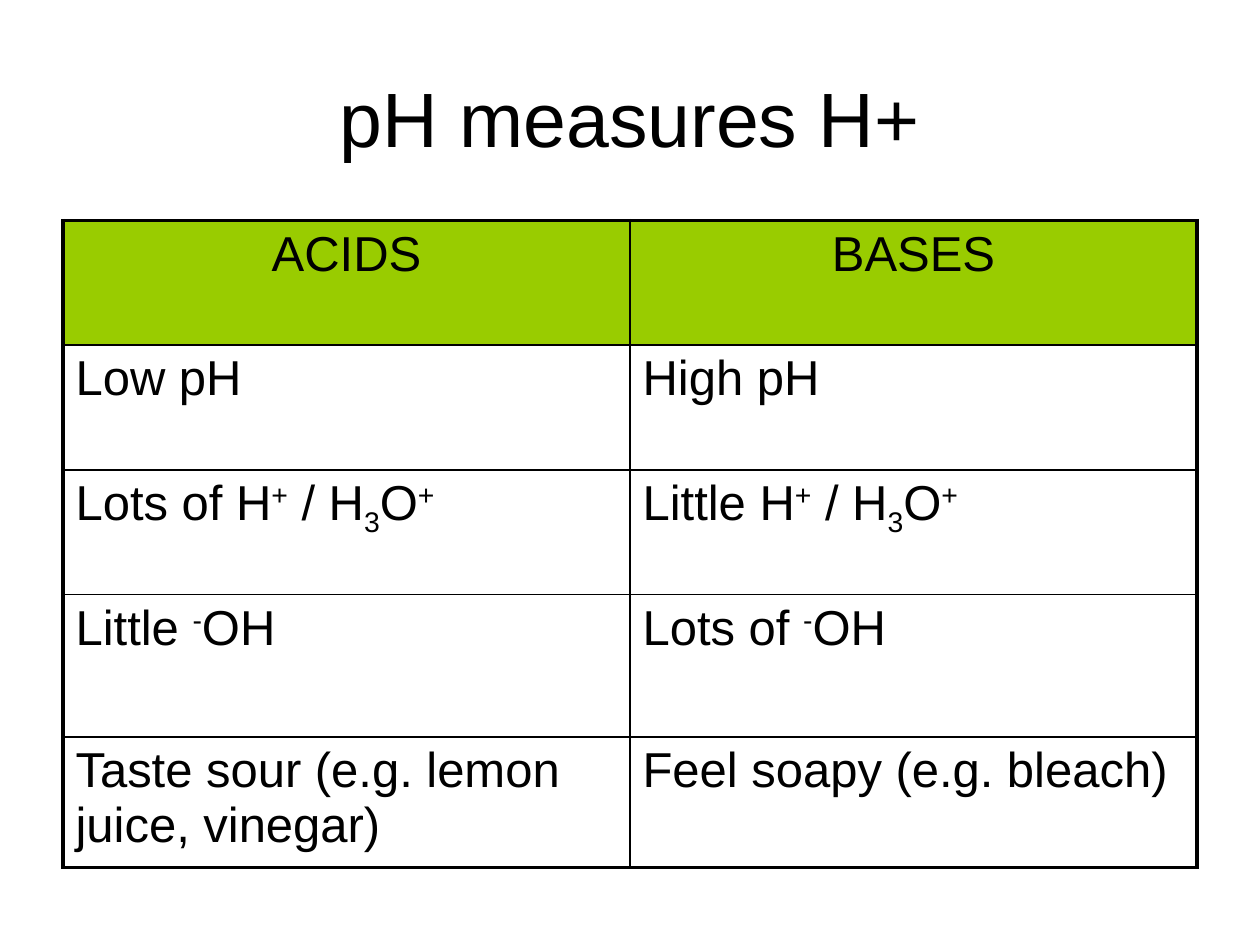
from lxml import etree
from pptx import Presentation
from pptx.dml.color import RGBColor
from pptx.enum.text import MSO_ANCHOR, PP_ALIGN
from pptx.oxml.ns import qn
from pptx.util import Inches, Pt

CENTER = PP_ALIGN.CENTER
LEFT = PP_ALIGN.LEFT
MIDDLE = MSO_ANCHOR.MIDDLE
BLACK = "000000"
GREEN = "99CC00"
SUPERSCRIPT = 30000
SUBSCRIPT = -25000
OUTER_LINE = 2.25
INNER_LINE = 1


def color(value):
    return RGBColor.from_string(value)


class SlideBuilder:
    font_name = "Arial"

    def __init__(self, slide):
        self.slide = slide

    def fill_paragraph(self, paragraph, pieces, size, align):
        paragraph.alignment = align
        paragraph.font.name = self.font_name
        paragraph.font.size = Pt(size)
        paragraph.font.color.rgb = color(BLACK)
        for words, baseline in pieces:
            run = paragraph.add_run()
            run.text = words
            if baseline:
                run._r.get_or_add_rPr().set("baseline", str(baseline))

    def title(self, words, left, top, width, height):
        box = self.slide.shapes.add_textbox(
            Inches(left), Inches(top), Inches(width), Inches(height)
        )
        frame = box.text_frame
        frame.word_wrap = True
        frame.vertical_anchor = MIDDLE
        self.fill_paragraph(frame.paragraphs[0], [(words, 0)], 44, CENTER)

    def borders(self, cell, widths):
        properties = cell._tc.get_or_add_tcPr()
        for position, (side, width) in enumerate(widths.items()):
            line = etree.Element(qn(f"a:ln{side}"), w=str(int(Pt(width))))
            fill = etree.SubElement(line, qn("a:solidFill"))
            etree.SubElement(fill, qn("a:srgbClr"), val=BLACK)
            properties.insert(position, line)

    def table(self, rows, left, top, column_width, row_heights):
        columns = len(rows[0])
        table = self.slide.shapes.add_table(
            len(rows), columns, Inches(left), Inches(top),
            Inches(column_width * columns), Inches(sum(row_heights)),
        ).table
        table.first_row = False
        table.horz_banding = False
        for column in table.columns:
            column.width = Inches(column_width)
        last_row, last_column = len(rows) - 1, columns - 1
        for r, (entries, height) in enumerate(zip(rows, row_heights)):
            table.rows[r].height = Inches(height)
            for c, pieces in enumerate(entries):
                cell = table.cell(r, c)
                if r == 0:
                    cell.fill.solid()
                    cell.fill.fore_color.rgb = color(GREEN)
                else:
                    cell.fill.background()
                align = CENTER if r == 0 else LEFT
                self.fill_paragraph(
                    cell.text_frame.paragraphs[0], pieces, 28, align
                )
                on_edge = {
                    "L": c == 0,
                    "R": c == last_column,
                    "T": r == 0,
                    "B": r == last_row,
                }
                self.borders(cell, {
                    side: OUTER_LINE if outer else INNER_LINE
                    for side, outer in on_edge.items()
                })


def plain(words):
    return [(words, 0)]


def hydronium(amount):
    return [
        (f"{amount} H", 0), ("+", SUPERSCRIPT), (" / H", 0),
        ("3", SUBSCRIPT), ("O", 0), ("+", SUPERSCRIPT),
    ]


def hydroxide(amount):
    return [(f"{amount} ", 0), ("-", SUPERSCRIPT), ("OH", 0)]


def main():
    presentation = Presentation()
    presentation.slide_width = Inches(10)
    presentation.slide_height = Inches(7.5)
    slide = presentation.slides.add_slide(presentation.slide_layouts[6])
    builder = SlideBuilder(slide)

    builder.title("pH measures H+", 0.5, 0.3, 9, 1.25)
    comparison = [
        [plain("ACIDS"), plain("BASES")],
        [plain("Low pH"), plain("High pH")],
        [hydronium("Lots of"), hydronium("Little")],
        [hydroxide("Little"), hydroxide("Lots of")],
        [plain("Taste sour (e.g. lemon juice, vinegar)"),
         plain("Feel soapy (e.g. bleach)")],
    ]
    builder.table(comparison, 0.5, 1.75, 4.5, [0.99, 0.99, 0.99, 1.13, 1.03])
    presentation.save("out.pptx")


if __name__ == "__main__":
    main()
